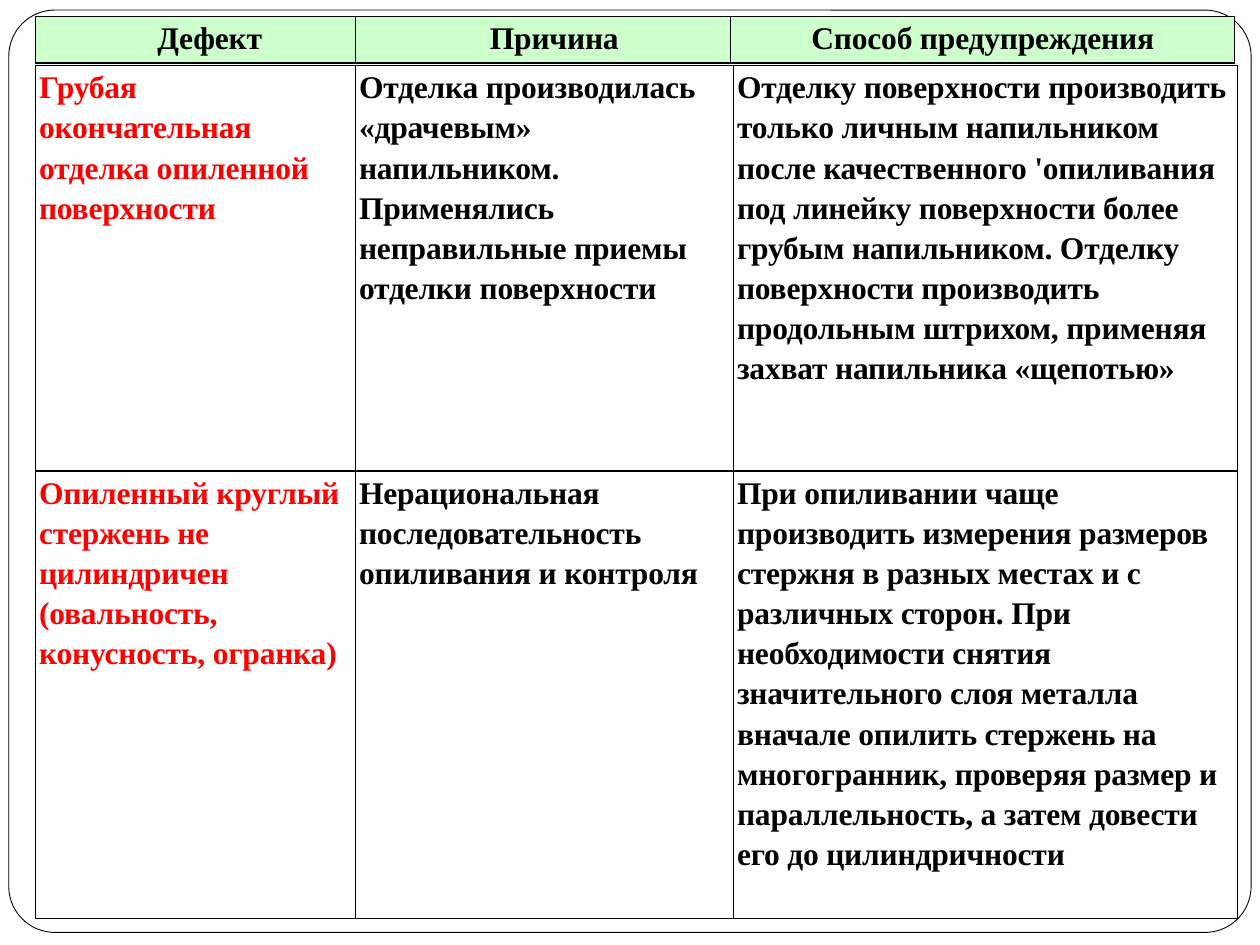
from lxml import etree
from pptx import Presentation, util as u
from pptx.dml.color import RGBColor
from pptx.enum import shapes, text
from pptx.oxml.ns import qn

BLACK, RED, WHITE, GREEN = "000000", "FF0000", "FFFFFF", "CCFFCC"
WIDTH, HEIGHT = 10, 7.5
LEFT = 0.28

# Content: each table has its place, grid and cell format
TABLES = [
    dict(
        top=0.52, columns=[2.54, 3, 4], heights=[3.22, 3.55],
        margin=0.03, fill=WHITE, colours=[RED, BLACK, BLACK],
        align=text.PP_ALIGN.LEFT, indents=[0, 0, 0],
        rows=[
            ["Грубая окончательная отделка опиленной поверхности",
             "Отделка производилась «драчевым» напильником. Применялись "
             "неправильные приемы отделки поверхности",
             "Отделку поверхности производить только личным напильником "
             "после качественного 'опиливания под линейку поверхности более "
             "грубым напильником. Отделку поверхности производить продольным "
             "штрихом, применяя захват напильника «щепотью»"],
            ["Опиленный круглый стержень не цилиндричен (овальность, "
             "конусность, огранка)",
             "Нерациональная последовательность опиливания и контроля",
             "При опиливании чаще производить измерения размеров стержня в "
             "разных местах и с различных сторон. При необходимости снятия "
             "значительного слоя металла вначале опилить стержень на "
             "многогранник, проверяя размер и параллельность, а затем "
             "довести его до цилиндричности"],
        ],
    ),
    dict(
        top=0.13, columns=[2.54, 2.98, 4], heights=[0.37],
        margin=0.02, fill=GREEN, colours=[BLACK] * 3,
        align=text.PP_ALIGN.CENTER, indents=[0.23, 0.18, 0],
        rows=[["Дефект", "Причина", "Способ предупреждения"]],
    ),
]
FONT = dict(name="Times New Roman", size=u.Pt(18), bold=True)


def colour(value):
    return RGBColor.from_string(value)


def apply(target, values):
    for name, value in values.items():
        setattr(target, name, value)


def paint(item, value):
    item.fill.solid()
    item.fill.fore_color.rgb = colour(value)


def add_borders(cell):
    """Put a 1 pt black line on every side, ahead of the cell fill."""
    properties = cell._tc.get_or_add_tcPr()
    for index, side in enumerate(("a:lnL", "a:lnR", "a:lnT", "a:lnB")):
        line = etree.Element(qn(side), w=str(u.Pt(1)))
        fill = etree.SubElement(line, qn("a:solidFill"))
        etree.SubElement(fill, qn("a:srgbClr"), val=BLACK)
        properties.insert(index, line)


def fill_cell(cell, words, table, column):
    margin = u.Inches(table["margin"])
    apply(cell, dict(margin_left=margin, margin_right=margin, margin_top=0,
                     margin_bottom=0, vertical_anchor=text.MSO_ANCHOR.TOP))
    paint(cell, table["fill"])
    add_borders(cell)
    para = cell.text_frame.paragraphs[0]
    apply(para, dict(alignment=table["align"], line_spacing=1.15))
    para._p.get_or_add_pPr().set("marL", str(u.Inches(table["indents"][column])))
    span = para.add_run()
    span.text = words
    apply(span.font, FONT)
    span.font.color.rgb = colour(table["colours"][column])
    span._r.get_or_add_rPr().set("spc", "-10")


def add_grid(page, table):
    columns, heights = table["columns"], table["heights"]
    frame = page.shapes.add_table(
        len(heights), len(columns), u.Inches(LEFT), u.Inches(table["top"]),
        u.Inches(sum(columns)), u.Inches(sum(heights)))
    grid = frame.table
    apply(grid, dict(first_row=False, horz_banding=False))
    for column, width in zip(grid.columns, columns):
        column.width = u.Inches(width)
    for row, height, line in zip(grid.rows, heights, table["rows"]):
        row.height = u.Inches(height)
        for index, words in enumerate(line):
            fill_cell(row.cells[index], words, table, index)


def main():
    deck = Presentation()
    apply(deck, dict(slide_width=u.Inches(WIDTH), slide_height=u.Inches(HEIGHT)))
    page = deck.slides.add_slide(deck.slide_layouts[6])

    # Rounded frame around the slide
    border = page.shapes.add_shape(
        shapes.MSO_SHAPE.ROUNDED_RECTANGLE,
        *map(u.Inches, (0.07, 0.08, 9.86, 7.32)))
    border.adjustments[0] = 0.05
    border.shadow.inherit = False
    paint(border, WHITE)
    border.line.color.rgb = colour(BLACK)
    border.line.width = u.Pt(0.5)

    # Body table, then its header
    for table in TABLES:
        add_grid(page, table)
    deck.save("out.pptx")


if __name__ == "__main__":
    main()
